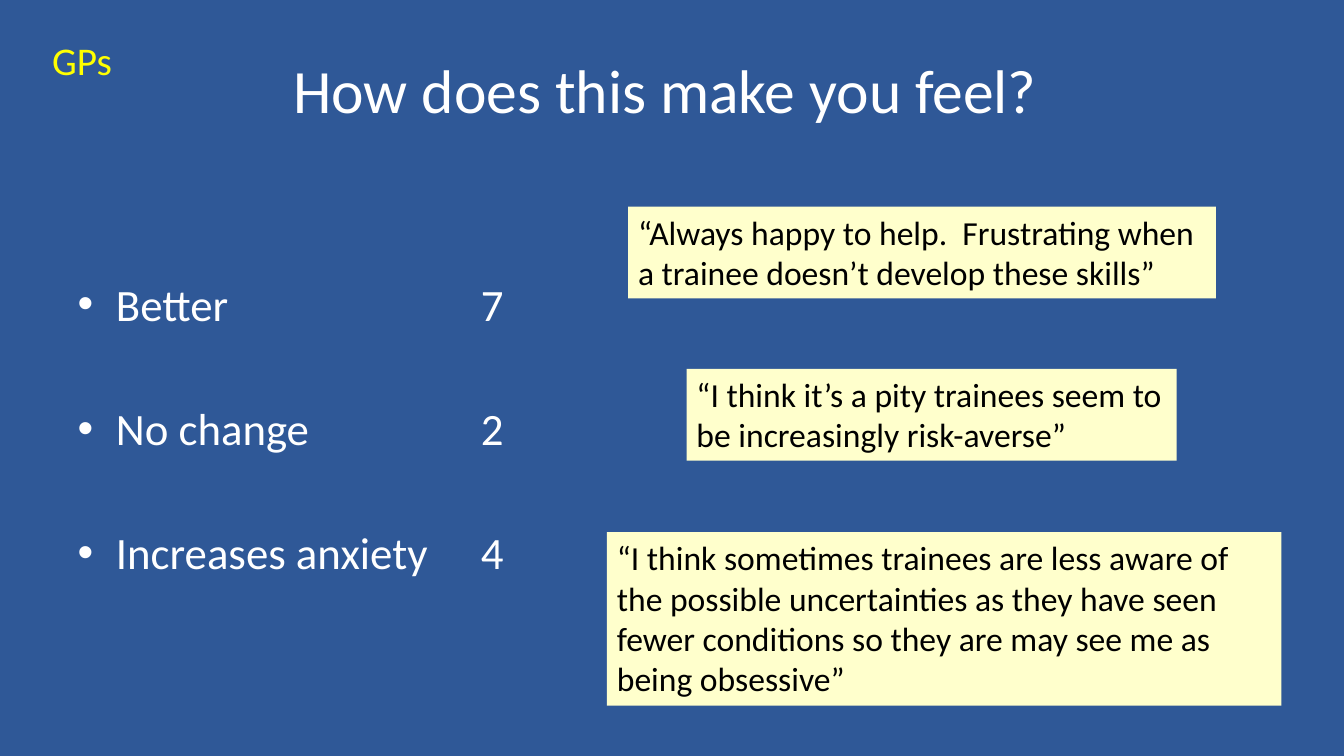
"""Build the slide on how GPs feel about being asked for help."""
from pptx import Presentation
from pptx.dml.color import RGBColor
from pptx.enum.shapes import MSO_SHAPE
from pptx.enum.text import MSO_ANCHOR, MSO_AUTO_SIZE, PP_ALIGN
from pptx.util import Inches, Pt

TITLE = "How does this make you feel?"
AUDIENCE = "GPs"
ANSWERS = ["Better \t\t\t7", "No change \t\t2", "Increases anxiety\t4"]
QUOTES = [
    ("“I think sometimes trainees are less aware of the possible uncertainties "
     "as they have seen fewer conditions so they are may see me as being obsessive”",
     (6.02, 5.28, 6.69, 1.72)),
    ("“I think it’s a pity trainees seem to be increasingly risk-averse”",
     (6.81, 3.66, 4.86, 0.91)),
    ("“Always happy to help.  Frustrating when a trainee doesn’t develop these skills”",
     (6.23, 2.05, 5.83, 0.91)),
]
TITLE_BOX = (0.6, 0.26, 12, 1.25)
ANSWERS_BOX = (0.67, 2.69, 5.3, 4.01)
AUDIENCE_BOX = (0.42, 0.31, 0.94, 0.57)

FONT = "Calibri"
BLUE = RGBColor(0x2F, 0x58, 0x97)
WHITE = RGBColor(0xFF, 0xFF, 0xFF)
YELLOW = RGBColor(0xFF, 0xFF, 0x00)
CREAM = RGBColor(0xFF, 0xFF, 0xCC)
BLACK = RGBColor(0x00, 0x00, 0x00)
RECTANGLE = MSO_SHAPE.RECTANGLE
TOP, MIDDLE = MSO_ANCHOR.TOP, MSO_ANCHOR.MIDDLE
LEFT, CENTER = PP_ALIGN.LEFT, PP_ALIGN.CENTER
NO_FIT = MSO_AUTO_SIZE.NONE
ANSWER_GAP = Pt(50.5)
BULLET_INDENT = Inches(0.38)
TAB_STEP = Inches(1)


def inches(box):
    return [Inches(length) for length in box]


def place(shape, box):
    shape.left, shape.top, shape.width, shape.height = inches(box)


def write(shape, lines, size, color, align=LEFT, anchor=TOP):
    frame = shape.text_frame
    frame.word_wrap = True
    frame.auto_size = NO_FIT
    frame.vertical_anchor = anchor
    for index, line in enumerate(lines):
        paragraph = frame.add_paragraph() if index else frame.paragraphs[0]
        paragraph.alignment = align
        run = paragraph.add_run()
        run.text = line
        run.font.name = FONT
        run.font.size = Pt(size)
        run.font.color.rgb = color


def space_answers(paragraphs):
    for paragraph in paragraphs:
        paragraph.space_before = Pt(0)
        paragraph.space_after = ANSWER_GAP
        properties = paragraph._p.get_or_add_pPr()
        properties.set("marL", str(BULLET_INDENT))
        properties.set("indent", str(-BULLET_INDENT))
        properties.set("defTabSz", str(TAB_STEP))


def main():
    presentation = Presentation()
    presentation.slide_width = Inches(13.33)
    presentation.slide_height = Inches(7.5)
    slide = presentation.slides.add_slide(presentation.slide_layouts[1])
    slide.background.fill.solid()
    slide.background.fill.fore_color.rgb = BLUE

    title, answers = slide.placeholders
    place(title, TITLE_BOX)
    write(title, [TITLE], 44, WHITE, CENTER, MIDDLE)
    place(answers, ANSWERS_BOX)
    write(answers, ANSWERS, 32, WHITE)
    space_answers(answers.text_frame.paragraphs)

    audience = slide.shapes.add_textbox(*inches(AUDIENCE_BOX))
    write(audience, [AUDIENCE], 28, YELLOW)

    for quote, box in QUOTES:
        card = slide.shapes.add_shape(RECTANGLE, *inches(box))
        card.shadow.inherit = False
        card.fill.solid()
        card.fill.fore_color.rgb = CREAM
        card.line.fill.background()
        write(card, [quote], 24, BLACK)

    presentation.save("out.pptx")


if __name__ == "__main__":
    main()
